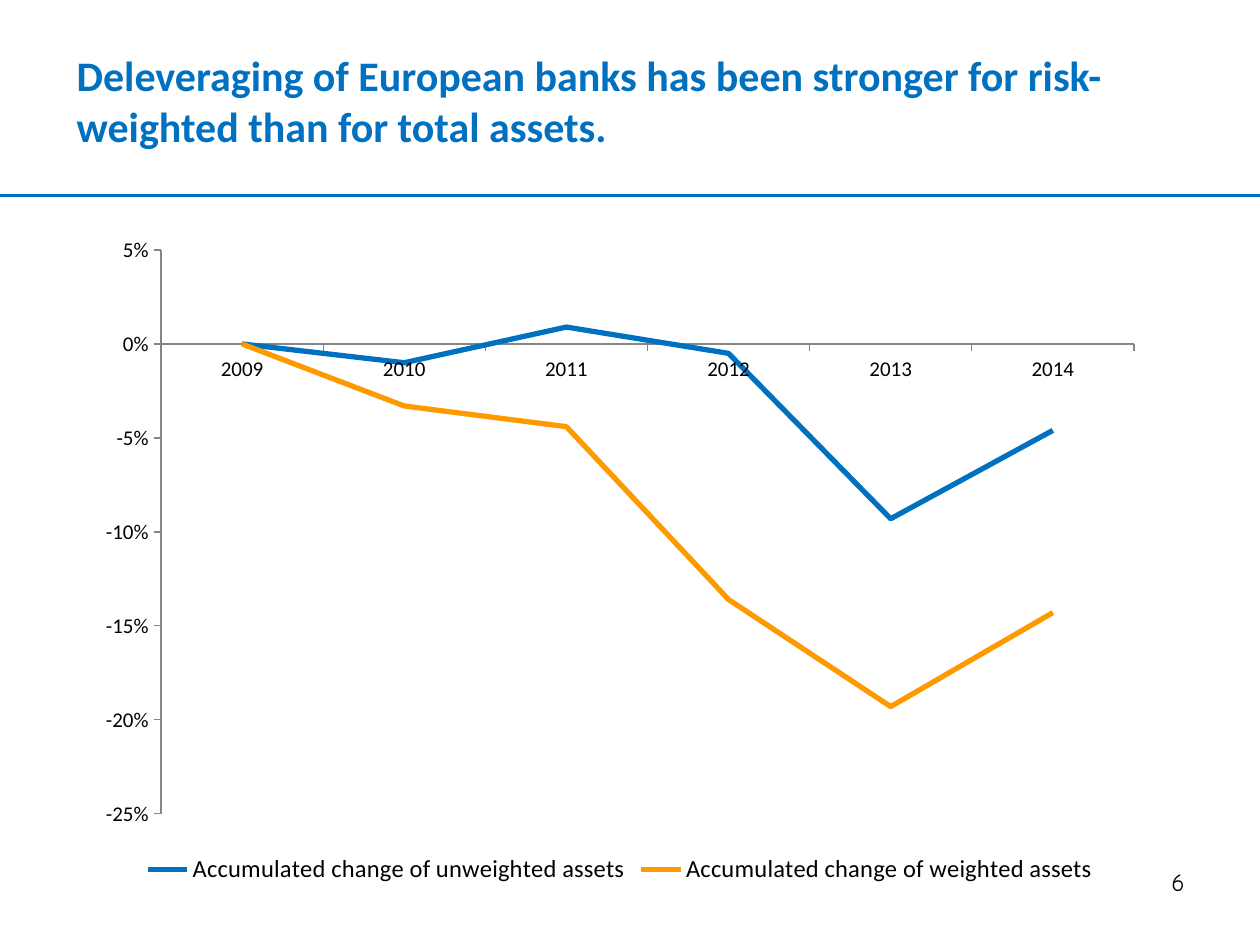
import dataclasses
import lxml.etree
import pptx
import pptx.chart.data
import pptx.dml.color
import pptx.enum.chart
import pptx.enum.shapes
import pptx.enum.text
import pptx.oxml
import pptx.oxml.ns
import pptx.util

Inches = pptx.util.Inches
Pt = pptx.util.Pt
qn = pptx.oxml.ns.qn


@dataclasses.dataclass
class Theme:
    blue: str = "0070C0"
    orange: str = "FF9900"
    black: str = "000000"
    gray: str = "868686"
    font: str = "Calibri"
    hand: str = "Comic Neue"
    head: int = 24
    label: int = 12
    small: int = 14


theme = Theme()
rgb = pptx.dml.color.RGBColor.from_string
align = pptx.enum.text.PP_ALIGN
anchor = pptx.enum.text.MSO_ANCHOR


def style(font, size, name=theme.font, color=theme.black, bold=False):
    font.size = Pt(size)
    font.name = name
    font.bold = bold
    font.color.rgb = rgb(color)


def write(text, box, side=align.LEFT, hold=anchor.TOP, **look):
    shape = slide.shapes.add_textbox(*map(Inches, box))
    frame = shape.text_frame
    frame.word_wrap = True
    frame.vertical_anchor = hold
    para = frame.paragraphs[0]
    para.alignment = side
    run = para.add_run()
    run.text = text
    style(run.font, **look)


deck = pptx.Presentation()
deck.slide_width, deck.slide_height = Inches(10), Inches(7.5)
slide = deck.slides.add_slide(deck.slide_layouts[6])

# Rule under the title
rule = slide.shapes.add_connector(
    pptx.enum.shapes.MSO_CONNECTOR.STRAIGHT,
    Inches(0), Inches(1.55), Inches(10), Inches(1.55))
rule.line.color.rgb = rgb(theme.blue)
rule.line.width = Pt(2)
lxml.etree.SubElement(rule.element.spPr, qn("a:effectLst"))

# Title and page number
write("Deleveraging of European banks has been stronger for "
      "risk-weighted than for total assets.",
      (0.51, 0.13, 8.98, 1.33), hold=anchor.MIDDLE,
      size=theme.head, color=theme.blue, bold=True)
write("6", (7.17, 6.83, 2.33, 0.52), side=align.RIGHT,
      size=theme.small, name=theme.hand)

# Line chart
lines = [
    ("Accumulated change of unweighted assets", theme.blue,
     (0, -0.01, 0.009, -0.005, -0.093, -0.046)),
    ("Accumulated change of weighted assets", theme.orange,
     (0, -0.033, -0.044, -0.136, -0.193, -0.143)),
]
data = pptx.chart.data.CategoryChartData(number_format="0%")
data.categories = [str(year) for year in range(2009, 2015)]
for name, color, vals in lines:
    data.add_series(name, vals)
kinds = pptx.enum.chart
chart = slide.shapes.add_chart(
    kinds.XL_CHART_TYPE.LINE, Inches(0.67), Inches(1.78),
    Inches(8.5), Inches(5.28), data).chart
chart.has_title = False
style(chart.font, 10, name=theme.hand)
chart.plots[0].vary_by_categories = False
for series, (name, color, vals) in zip(chart.plots[0].series, lines):
    series.smooth = False
    series.marker.style = kinds.XL_MARKER_STYLE.NONE
    series.format.line.color.rgb = rgb(color)
    series.format.line.width = Pt(3)

# Axes
for axis in (chart.category_axis, chart.value_axis):
    axis.has_major_gridlines = False
    axis.major_tick_mark = kinds.XL_TICK_MARK.OUTSIDE
    axis.minor_tick_mark = kinds.XL_TICK_MARK.NONE
    axis.format.line.color.rgb = rgb(theme.gray)
    axis.format.line.width = Pt(0.75)
    style(axis.tick_labels.font, theme.label)
scale = chart.value_axis
scale.minimum_scale, scale.maximum_scale = -0.25, 0.05
scale.major_unit = 0.05
scale.tick_labels.number_format = "0%"
scale.tick_labels.number_format_is_linked = False

# Legend
chart.has_legend = True
chart.legend.position = kinds.XL_LEGEND_POSITION.BOTTOM
chart.legend.include_in_layout = False
style(chart.legend.font, theme.small)

# Fixed inner plot area, as shares of the chart frame
area = chart.element.find(".//" + qn("c:plotArea"))
for old in area.findall(qn("c:layout")):
    area.remove(old)
layout = lxml.etree.Element(qn("c:layout"))
manual = lxml.etree.SubElement(layout, qn("c:manualLayout"))
for tag, val in (("layoutTarget", "inner"), ("xMode", "edge"),
                 ("yMode", "edge"), ("x", "0.0715"), ("y", "0.0388"),
                 ("w", "0.9085"), ("h", "0.8475")):
    lxml.etree.SubElement(manual, qn("c:" + tag)).set("val", val)
area.insert(0, layout)

deck.save("out.pptx")
